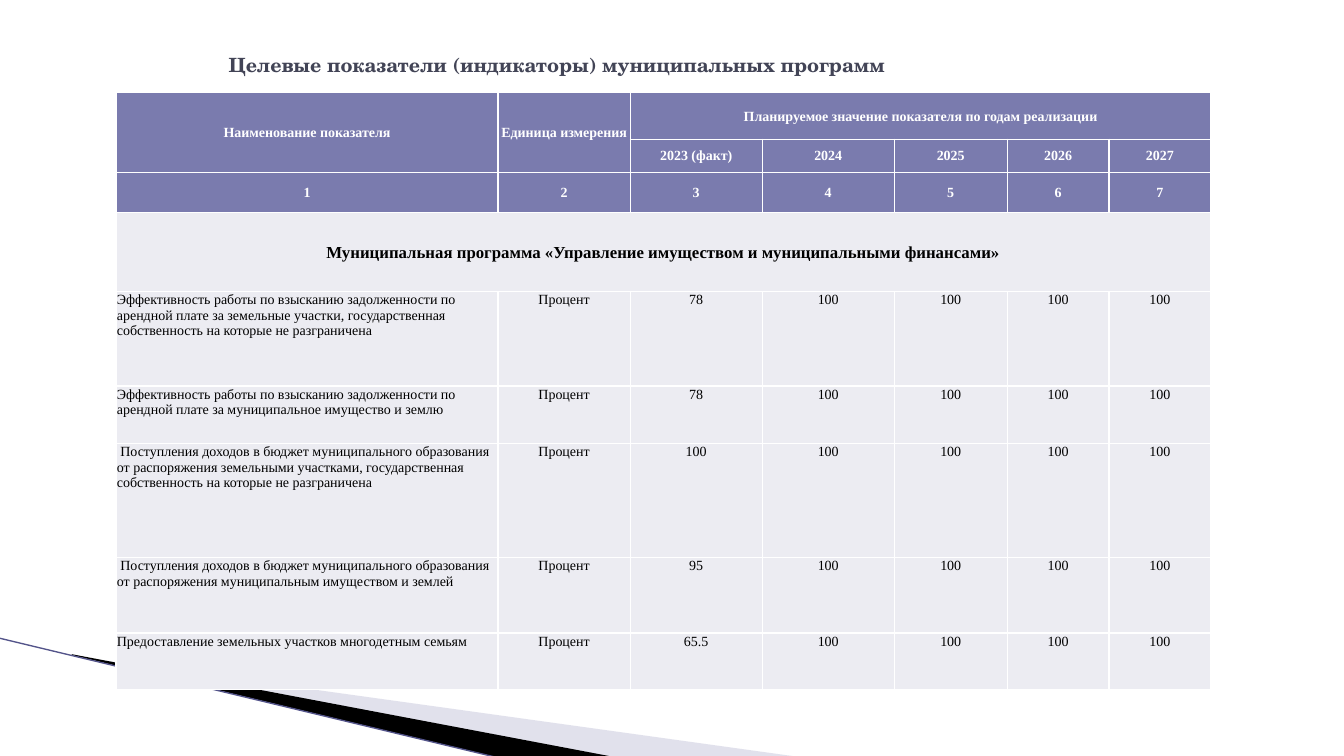
from dataclasses import dataclass

import lxml.etree
import pptx
import pptx.dml.color
import pptx.enum.shapes
import pptx.enum.text
import pptx.oxml
import pptx.oxml.ns
import pptx.util

Inches = pptx.util.Inches
Pt = pptx.util.Pt
qn = pptx.oxml.ns.qn
ALIGN = pptx.enum.text.PP_ALIGN
ANCHOR = pptx.enum.text.MSO_ANCHOR

SERIF = "Times New Roman"
WHITE, BLACK = "FFFFFF", "000000"
HEADER_FILL, BODY_FILL = "7A7BAE", "ECECF2"


@dataclass(frozen=True)
class Wedge:
    points: tuple[tuple[float, float], ...]
    color: str
    opacity: int = 100


@dataclass(frozen=True)
class CellStyle:
    fill: str
    color: str
    size: float
    bold: bool
    anchor: ANCHOR


@dataclass(frozen=True)
class Indicator:
    name: str
    fact_2023: str
    height: float
    unit: str = "Процент"
    planned: str = "100"

    def row(self) -> list[str]:
        return [self.name, self.unit, self.fact_2023] + [self.planned] * 4


WEDGES = (
    Wedge(((0.73, 6.51), (7.93, 7.51), (6.08, 7.51), (0.73, 6.5)), "B6B6D1", 40),
    Wedge(((0.71, 6.49), (6.09, 7.51), (4.96, 7.52), (0.72, 6.5)), BLACK),
)
HEADER = CellStyle(HEADER_FILL, WHITE, 10, True, ANCHOR.MIDDLE)
PROGRAM = CellStyle(BODY_FILL, BLACK, 12, True, ANCHOR.MIDDLE)
VALUE = CellStyle(BODY_FILL, BLACK, 10, False, ANCHOR.TOP)

INDICATORS = (
    Indicator("Эффективность работы по взысканию задолженности по арендной плате за земельные "
              "участки, государственная собственность на которые не разграничена", "78", 0.94),
    Indicator("Эффективность работы по взысканию задолженности по арендной плате за "
              "муниципальное имущество и землю", "78", 0.57),
    Indicator(" Поступления доходов в бюджет муниципального образования от распоряжения земельными "
              "участками, государственная собственность на которые не разграничена", "100", 1.13),
    Indicator(" Поступления доходов в бюджет муниципального образования от распоряжения "
              "муниципальным имуществом и землей", "95", 0.75),
    Indicator("Предоставление земельных участков многодетным семьям", "65.5", 0.56),
)
COLUMN_WIDTHS = (3.79, 1.31, 1.31, 1.31, 1.12, 1.01, 1.01)
ROW_HEIGHTS = (0.46, 0.33, 0.4, 0.78) + tuple(item.height for item in INDICATORS)
PROGRAM_ROW = 3
ROWS = [
    ["Наименование показателя", "Единица измерения",
     "Планируемое значение показателя по годам реализации"] + [""] * 4,
    ["", "", "2023 (факт)", "2024", "2025", "2026", "2027"],
    [str(number) for number in range(1, 8)],
    ["Муниципальная программа «Управление имуществом и муниципальными финансами»"] + [""] * 6,
] + [item.row() for item in INDICATORS]
MERGES = (((0, 0), (1, 0)), ((0, 1), (1, 1)), ((0, 2), (0, 6)), ((3, 0), (3, 6)))


def rgb(color: str) -> pptx.dml.color.RGBColor:
    return pptx.dml.color.RGBColor.from_string(color)


def set_all(target, formats: dict) -> None:
    for attribute, value in formats.items():
        setattr(target, attribute, value)


def write(paragraph, text: str, font: str, size: float, color: str, bold: bool) -> None:
    run = paragraph.add_run()
    run.text = text
    set_all(run.font, {"name": font, "size": Pt(size), "bold": bold})
    run.font.color.rgb = rgb(color)


def draw_wedge(slide, wedge: Wedge) -> None:
    start, *rest = [(Inches(x), Inches(y)) for x, y in wedge.points]
    outline = slide.shapes.build_freeform(*start)
    outline.add_line_segments(rest, close=True)
    shape = outline.convert_to_shape()
    shape.shadow.inherit = False
    shape.fill.solid()
    shape.fill.fore_color.rgb = rgb(wedge.color)
    shape.line.fill.background()
    if wedge.opacity < 100:
        tint = next(shape.fill._xPr.iter(qn("a:srgbClr")))
        lxml.etree.SubElement(tint, qn("a:alpha"), val=str(wedge.opacity * 1000))


def draw_edge(slide) -> None:
    edge = slide.shapes.add_connector(
        pptx.enum.shapes.MSO_CONNECTOR.STRAIGHT,
        Inches(-0.01), Inches(6.33), Inches(4.95), Inches(7.52))
    edge.line.color.rgb = rgb("53548A")
    edge.line.width = Pt(0.95)
    lxml.etree.SubElement(edge._element.spPr, qn("a:effectLst"))


def draw_title(slide) -> None:
    title = slide.shapes.add_textbox(Inches(2.17), Inches(0.3), Inches(9), Inches(0.69)).text_frame
    set_all(title, {"word_wrap": True, "vertical_anchor": ANCHOR.MIDDLE})
    write(title.paragraphs[0], "Целевые показатели (индикаторы) муниципальных программ",
          "TeX Gyre Schola", 14, "424456", True)


def add_borders(cell) -> None:
    properties = cell._tc.get_or_add_tcPr()
    for position, side in enumerate(("lnL", "lnR", "lnT", "lnB")):
        border = pptx.oxml.parse_xml(
            f'<a:{side} {pptx.oxml.ns.nsdecls("a")} w="12700"><a:solidFill>'
            f'<a:srgbClr val="{WHITE}"/></a:solidFill></a:{side}>')
        properties.insert(position, border)


def fill_cell(cell, text: str, style: CellStyle, align: ALIGN) -> None:
    set_all(cell, {
        "margin_left": Inches(0.01), "margin_right": Inches(0.01),
        "margin_top": Inches(0.01), "margin_bottom": 0,
        "vertical_anchor": style.anchor,
    })
    cell.fill.solid()
    cell.fill.fore_color.rgb = rgb(style.fill)
    add_borders(cell)
    if text:
        paragraph = cell.text_frame.paragraphs[0]
        paragraph.alignment = align
        write(paragraph, text, SERIF, style.size, style.color, style.bold)


def draw_indicators(slide) -> None:
    table = slide.shapes.add_table(
        len(ROWS), len(COLUMN_WIDTHS), Inches(1.15), Inches(0.92),
        Inches(sum(COLUMN_WIDTHS)), Inches(sum(ROW_HEIGHTS))).table
    for column, width in zip(table.columns, COLUMN_WIDTHS):
        column.width = Inches(width)
    for row, height in zip(table.rows, ROW_HEIGHTS):
        row.height = Inches(height)
    for first, last in MERGES:
        table.cell(*first).merge(table.cell(*last))
    for r, texts in enumerate(ROWS):
        style = HEADER if r < PROGRAM_ROW else PROGRAM if r == PROGRAM_ROW else VALUE
        for c, text in enumerate(texts):
            is_name = r > PROGRAM_ROW and c == 0
            fill_cell(table.cell(r, c), text, style, ALIGN.LEFT if is_name else ALIGN.CENTER)


def main() -> None:
    deck = pptx.Presentation()
    set_all(deck, {"slide_width": Inches(13.33), "slide_height": Inches(7.5)})
    slide = deck.slides.add_slide(deck.slide_layouts[6])
    for wedge in WEDGES:
        draw_wedge(slide, wedge)
    draw_edge(slide)
    draw_title(slide)
    draw_indicators(slide)
    deck.save("out.pptx")


if __name__ == "__main__":
    main()
